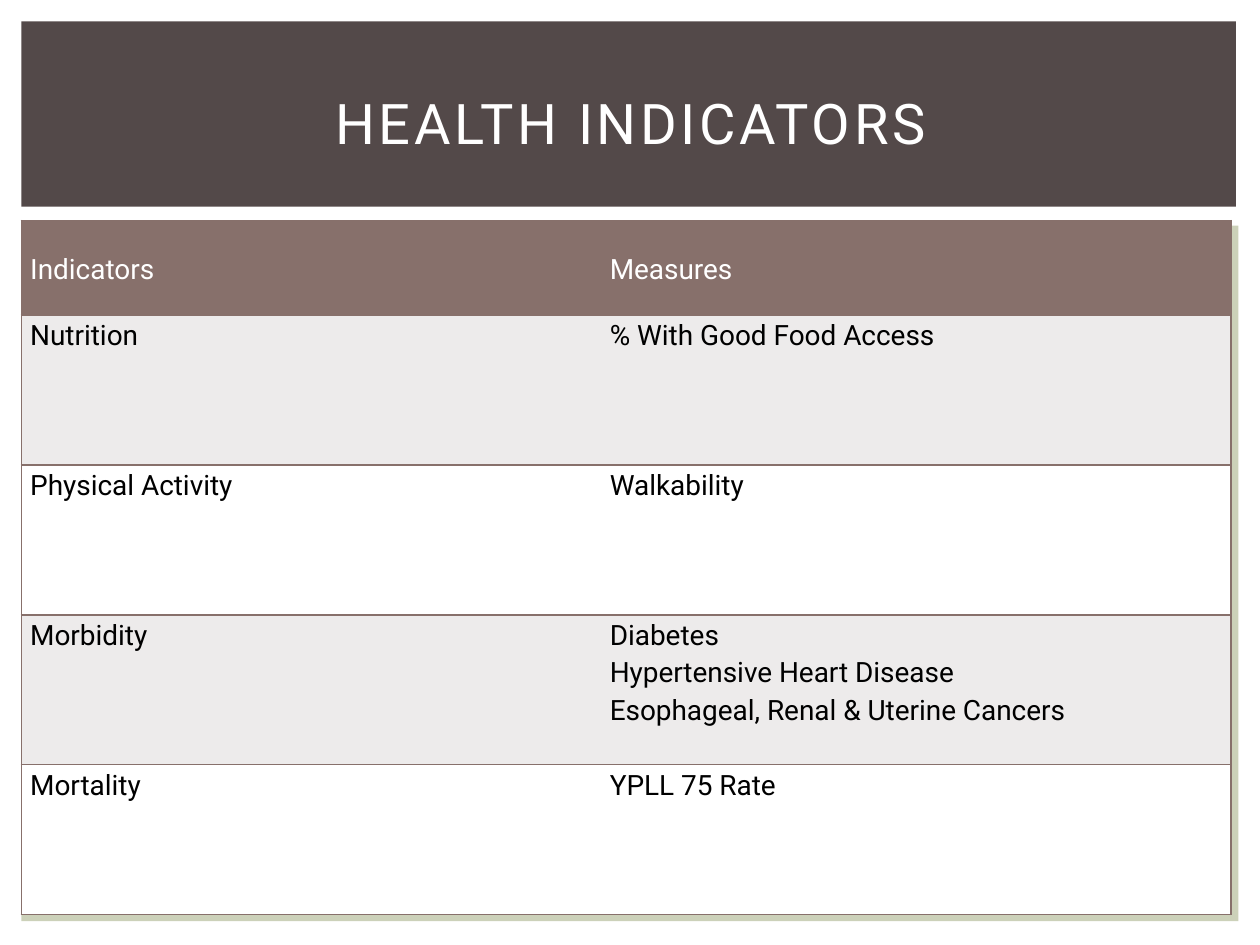
from pptx import Presentation
from pptx.dml.color import RGBColor
from pptx.enum.shapes import MSO_SHAPE
from pptx.enum.text import MSO_ANCHOR, PP_ALIGN
from pptx.oxml import parse_xml
from pptx.oxml.ns import nsdecls
from pptx.util import Inches, Pt

COLORS = {
    "white": "FFFFFF",
    "black": "000000",
    "sage": "CCD1B9",
    "banner": "534949",
    "header": "87706B",
    "band": "EDEBEB",
}

ROWS = [
    ("Indicators", "Measures"),
    ("Nutrition", "% With Good Food Access"),
    ("Physical Activity", "Walkability"),
    ("Morbidity", "Diabetes\nHypertensive Heart Disease\n"
                  "Esophageal, Renal & Uterine Cancers"),
    ("Mortality", "YPLL 75 Rate"),
]
COLUMN_WIDTHS = [4.48, 5.12]
ROW_HEIGHTS = [0.75] + [1.19] * 4


class SlideBuilder:
    font_name = "Roboto"

    def __init__(self, page):
        self.page = page

    def color(self, name):
        return RGBColor.from_string(COLORS[name])

    def format_span(self, span, size, color):
        span.font.name = self.font_name
        span.font.size = Pt(size)
        span.font.color.rgb = self.color(color)

    def panel(self, left, top, width, height, color):
        shape = self.page.shapes.add_shape(
            MSO_SHAPE.RECTANGLE, Inches(left), Inches(top), Inches(width), Inches(height))
        shape.shadow.inherit = False
        shape.fill.solid()
        shape.fill.fore_color.rgb = self.color(color)
        shape.line.fill.background()

    def title(self, text, left, top, width, height):
        box = self.page.shapes.add_textbox(
            Inches(left), Inches(top), Inches(width), Inches(height))
        frame = box.text_frame
        frame.text = text
        frame.word_wrap = True
        frame.vertical_anchor = MSO_ANCHOR.MIDDLE
        para = frame.paragraphs[0]
        para.alignment = PP_ALIGN.CENTER
        span = para.runs[0]
        self.format_span(span, 32, "white")
        span.font._element.set("spc", "200")  # letter spacing of 2 pt

    def borders(self, cell, sides):
        properties = cell._tc.get_or_add_tcPr()
        for side in "LRTB":  # order required by the schema
            if side in sides:
                content = f'<a:solidFill><a:srgbClr val="{COLORS["header"]}"/></a:solidFill>'
                width = Pt(1)
            else:
                content, width = "<a:noFill/>", 0
            properties.append(parse_xml(
                f'<a:ln{side} {nsdecls("a")} w="{width}">{content}</a:ln{side}>'))

    def cell(self, cell, text, fill, color, anchor, sides, indent):
        self.borders(cell, sides)
        cell.fill.solid()
        cell.fill.fore_color.rgb = self.color(fill)
        cell.vertical_anchor = anchor
        cell.margin_left = cell.margin_right = Inches(0.07)
        cell.margin_top = cell.margin_bottom = 0
        cell.text_frame.text = text
        for para in cell.text_frame.paragraphs:
            para.line_spacing = 1.15
            if indent:
                para._p.get_or_add_pPr().set("marL", str(Inches(indent)))
            self.format_span(para.runs[0], 16, color)

    def table(self, left, top, rows, widths, heights):
        table = self.page.shapes.add_table(
            len(rows), len(widths), Inches(left), Inches(top),
            Inches(sum(widths)), Inches(sum(heights))).table
        for column, width in zip(table.columns, widths):
            column.width = Inches(width)
        for row, height in zip(table.rows, heights):
            row.height = Inches(height)
        for i, texts in enumerate(rows):
            if i == 0:
                fill, color, anchor = "header", "white", MSO_ANCHOR.MIDDLE
            else:
                fill = "band" if i % 2 else "white"
                color, anchor = "black", MSO_ANCHOR.TOP
            for j, text in enumerate(texts):
                sides, indent = ("RTB", 0.12) if j else ("LTB", 0)
                self.cell(table.cell(i, j), text, fill, color, anchor, sides, indent)


def main():
    deck = Presentation()
    deck.slide_width, deck.slide_height = Inches(10), Inches(7.5)
    builder = SlideBuilder(deck.slides.add_slide(deck.slide_layouts[6]))

    # Background panels
    builder.panel(0.17, 1.79, 9.66, 5.52, "sage")
    builder.panel(0.17, 0.17, 9.64, 1.47, "banner")

    # Title and indicator table
    builder.title("HEALTH INDICATORS", 0.42, 0.39, 9.17, 1.15)
    builder.table(0.17, 1.75, ROWS, COLUMN_WIDTHS, ROW_HEIGHTS)

    deck.save("out.pptx")


if __name__ == "__main__":
    main()
